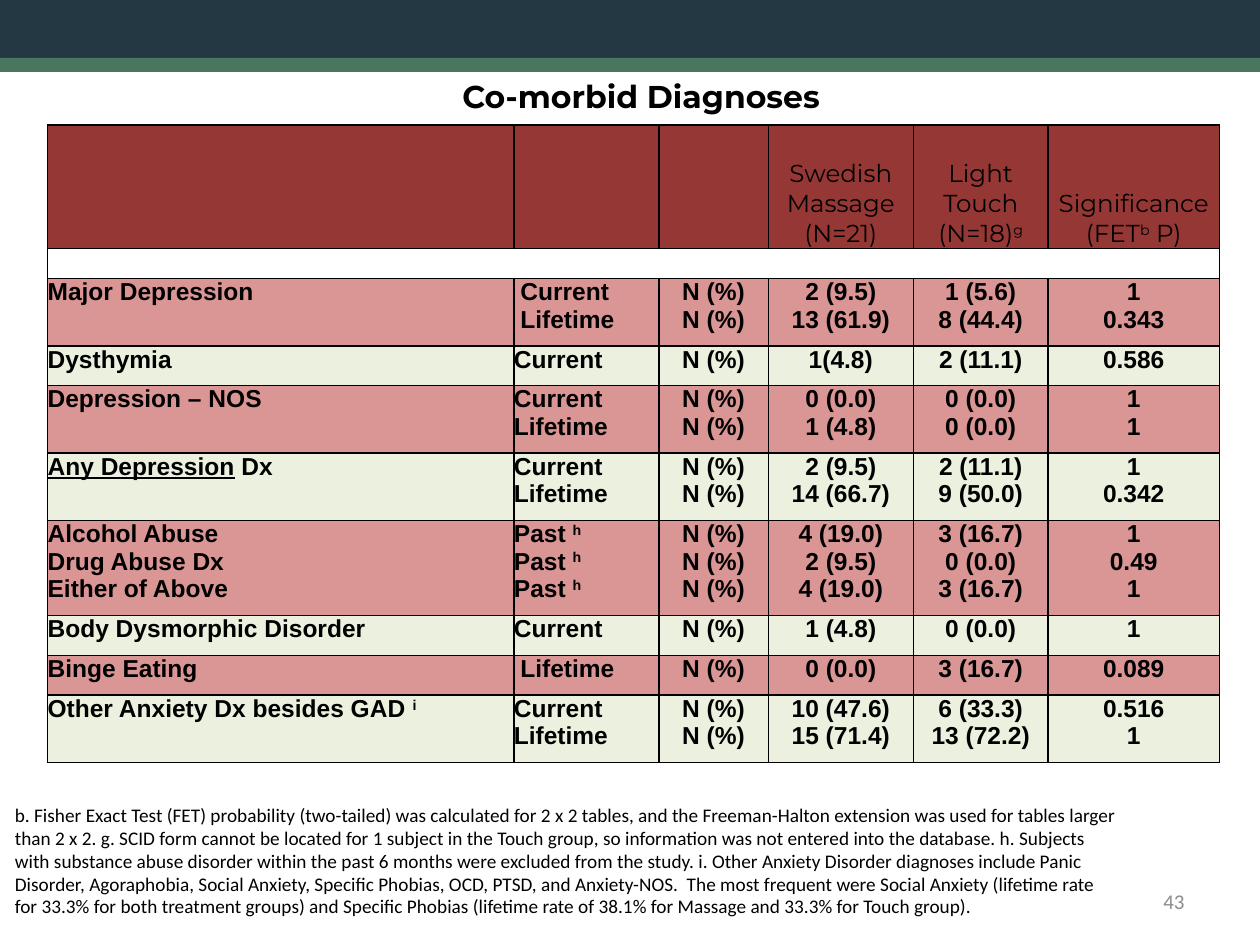
from dataclasses import dataclass
from itertools import cycle

from lxml.etree import SubElement
from pptx import Presentation
from pptx.dml.color import RGBColor
from pptx.enum.shapes import MSO_SHAPE as Shape
from pptx.enum.text import MSO_ANCHOR as Anchor, MSO_AUTO_SIZE as AutoSize, PP_ALIGN as Align
from pptx.oxml.ns import qn
from pptx.util import Cm, Pt


@dataclass(frozen=True)
class Theme:
    banner: str = "233843"
    stripe: str = "48765F"
    header: str = "953735"
    rose: str = "D99694"
    cream: str = "EBF1DE"
    white: str = "FFFFFF"
    black: str = "000000"
    gray: str = "8C8C8C"
    heading_font: str = "Montserrat"
    table_font: str = "Arial"
    note_font: str = "Calibri"
    title_size: int = 18
    table_size: int = 14
    number_size: int = 12
    note_size: int = 11


THEME = Theme()

COLUMN_WIDTHS = [9.4, 2.92, 2.21, 2.92, 2.72, 3.45]
HEADER_HEIGHT, GAP_HEIGHT = 2.49, 0.6
LINE_HEIGHT, ROW_PADDING = 0.56, 0.24

# ^...^ marks superscript, _..._ marks underline
HEADERS = ["", "", "", "Swedish Massage (N=21)", "Light Touch (N=18)^g^",
           "Significance\n(FET^b^ P)"]

# Diagnoses, then one tuple per line: period, Massage, Touch, significance
DIAGNOSES = [
    ("Major Depression", [("Current", "2 (9.5)", "1 (5.6)", "1"),
                          ("Lifetime", "13 (61.9)", "8 (44.4)", "0.343")]),
    ("Dysthymia", [("Current", "1(4.8)", "2 (11.1)", "0.586")]),
    ("Depression – NOS", [("Current", "0 (0.0)", "0 (0.0)", "1"),
                          ("Lifetime", "1 (4.8)", "0 (0.0)", "1")]),
    ("_Any Depression_ Dx", [("Current", "2 (9.5)", "2 (11.1)", "1"),
                             ("Lifetime", "14 (66.7)", "9 (50.0)", "0.342")]),
    ("Alcohol Abuse\nDrug Abuse Dx\nEither of Above",
     [("Past ^h^", "4 (19.0)", "3 (16.7)", "1"),
      ("Past ^h^", "2 (9.5)", "0 (0.0)", "0.49"),
      ("Past ^h^", "4 (19.0)", "3 (16.7)", "1")]),
    ("Body Dysmorphic Disorder", [("Current", "1 (4.8)", "0 (0.0)", "1")]),
    ("Binge Eating", [("Lifetime", "0 (0.0)", "3 (16.7)", "0.089")]),
    ("Other Anxiety Dx besides GAD ^i^",
     [("Current", "10 (47.6)", "6 (33.3)", "0.516"),
      ("Lifetime", "15 (71.4)", "13 (72.2)", "1")]),
]
INDENTED_PERIODS = {"Major Depression", "Binge Eating"}

FOOTNOTE = (
    "b. Fisher Exact Test (FET) probability (two-tailed) was calculated for 2 x 2 tables, "
    "and the Freeman-Halton extension was used for tables larger than 2 x 2. "
    "g. SCID form cannot be located for 1 subject in the Touch group, so information was "
    "not entered into the database. h. Subjects with substance abuse disorder within the "
    "past 6 months were excluded from the study. i. Other Anxiety Disorder diagnoses include "
    "Panic Disorder, Agoraphobia, Social Anxiety, Specific Phobias, OCD, PTSD, and "
    "Anxiety-NOS.  The most frequent were Social Anxiety (lifetime rate for 33.3% for both "
    "treatment groups) and Specific Phobias (lifetime rate of 38.1% for Massage and 33.3% "
    "for Touch group).")


def write(tf, text, *, font, size, color=THEME.black, bold=False, align=Align.LEFT,
          line_spacing=None):
    """Fill a text frame, one paragraph per line of marked-up text."""
    for i, line in enumerate(text.split("\n")):
        p = tf.paragraphs[0] if i == 0 else tf.add_paragraph()
        p.alignment = align
        if line_spacing:
            p.line_spacing = Pt(line_spacing)
        for j, part in enumerate(line.split("^")):
            for k, piece in enumerate(part.split("_")):
                if not piece:
                    continue
                r = p.add_run()
                r.text = piece
                r.font.name, r.font.size, r.font.bold = font, Pt(size), bold
                r.font.color.rgb = RGBColor.from_string(color)
                if k % 2:
                    r.font.underline = True
                if j % 2:
                    r._r.get_or_add_rPr().set("baseline", "30000")


def add_bar(s, top, height, color):
    sp = s.shapes.add_shape(Shape.RECTANGLE, 0, Cm(top), Cm(25.4), Cm(height))
    sp.shadow.inherit = False
    sp.fill.solid()
    sp.fill.fore_color.rgb = RGBColor.from_string(color)
    sp.line.fill.background()


def add_text(s, box, text, *, wrap=True, anchor=Anchor.TOP, grow=False, **style):
    tf = s.shapes.add_textbox(*map(Cm, box)).text_frame
    tf.word_wrap = wrap
    tf.vertical_anchor = anchor
    if grow:
        tf.auto_size = AutoSize.SHAPE_TO_FIT_TEXT
    write(tf, text, **style)


def style_cell(cell, fill, anchor=Anchor.TOP, indent=0):
    """Set margins, black borders and fill."""
    cell.margin_left = Cm(indent)
    cell.margin_right = cell.margin_top = cell.margin_bottom = 0
    cell.vertical_anchor = anchor
    tc_pr = cell._tc.get_or_add_tcPr()
    for side in ("a:lnL", "a:lnR", "a:lnT", "a:lnB"):
        ln = SubElement(tc_pr, qn(side), w=str(Pt(1)))
        SubElement(SubElement(ln, qn("a:solidFill")), qn("a:srgbClr"), val=THEME.black)
    cell.fill.solid()
    cell.fill.fore_color.rgb = RGBColor.from_string(fill)


def add_diagnosis_table(s):
    heights = [HEADER_HEIGHT, GAP_HEIGHT]
    heights += [LINE_HEIGHT * len(lines) + ROW_PADDING for _, lines in DIAGNOSES]
    table = s.shapes.add_table(len(heights), len(COLUMN_WIDTHS), Cm(0.96), Cm(2.52),
                               Cm(sum(COLUMN_WIDTHS)), Cm(sum(heights))).table
    table.first_row = table.horz_banding = False
    for column, width in zip(table.columns, COLUMN_WIDTHS):
        column.width = Cm(width)
    for row, height in zip(table.rows, heights):
        row.height = Cm(height)

    # Header and the empty row below it
    for c, text in enumerate(HEADERS):
        cell = table.cell(0, c)
        style_cell(cell, THEME.header, Anchor.BOTTOM)
        write(cell.text_frame, text, font=THEME.heading_font, size=THEME.table_size,
              align=Align.CENTER)
        gap = table.cell(1, c)
        style_cell(gap, THEME.white)
        gap.text_frame.paragraphs[0].font.size = Pt(THEME.table_size)
    table.cell(1, 0).merge(table.cell(1, len(HEADERS) - 1))

    # Diagnoses in alternating colours
    for r, ((name, lines), fill) in enumerate(
            zip(DIAGNOSES, cycle([THEME.rose, THEME.cream])), start=2):
        periods, *values = ["\n".join(column) for column in zip(*lines)]
        units = "\n".join(["N (%)"] * len(lines))
        for c, text in enumerate([name, periods, units, *values]):
            cell = table.cell(r, c)
            indent = 0.13 if c == 1 and name in INDENTED_PERIODS else 0
            style_cell(cell, fill, indent=indent)
            write(cell.text_frame, text, font=THEME.table_font, size=THEME.table_size,
                  bold=True, align=Align.LEFT if c < 2 else Align.CENTER)


def main():
    prs = Presentation()
    prs.slide_width, prs.slide_height = Cm(25.4), Cm(19.05)
    s = prs.slides.add_slide(prs.slide_layouts[6])

    # Top banner
    add_bar(s, 0, 1.37, THEME.banner)
    add_bar(s, 1.17, 0.28, THEME.stripe)

    add_diagnosis_table(s)

    # Footnote, title and slide number
    add_text(s, (0.05, 16.08, 22.78, 2.57), FOOTNOTE, grow=True, font=THEME.note_font,
             size=THEME.note_size, line_spacing=13)
    add_text(s, (9.07, 1.42, 7.92, 1.8), "Co-morbid Diagnoses", wrap=False, grow=True,
             font=THEME.heading_font, size=THEME.title_size, bold=True)
    add_text(s, (18.21, 17.65, 5.92, 1.02), "43", anchor=Anchor.MIDDLE,
             font=THEME.note_font, size=THEME.number_size, color=THEME.gray,
             align=Align.RIGHT)

    prs.save("out.pptx")


if __name__ == "__main__":
    main()
